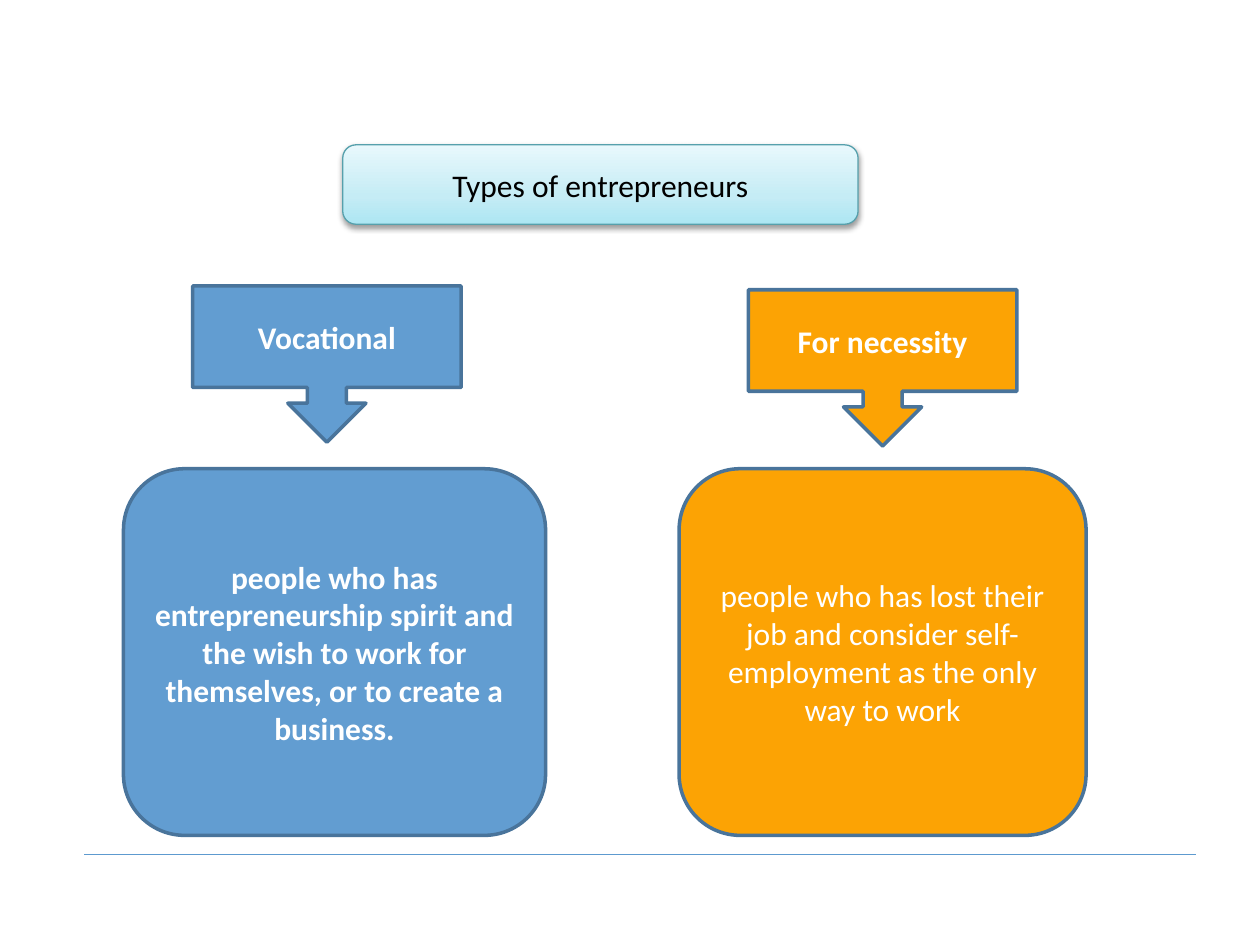
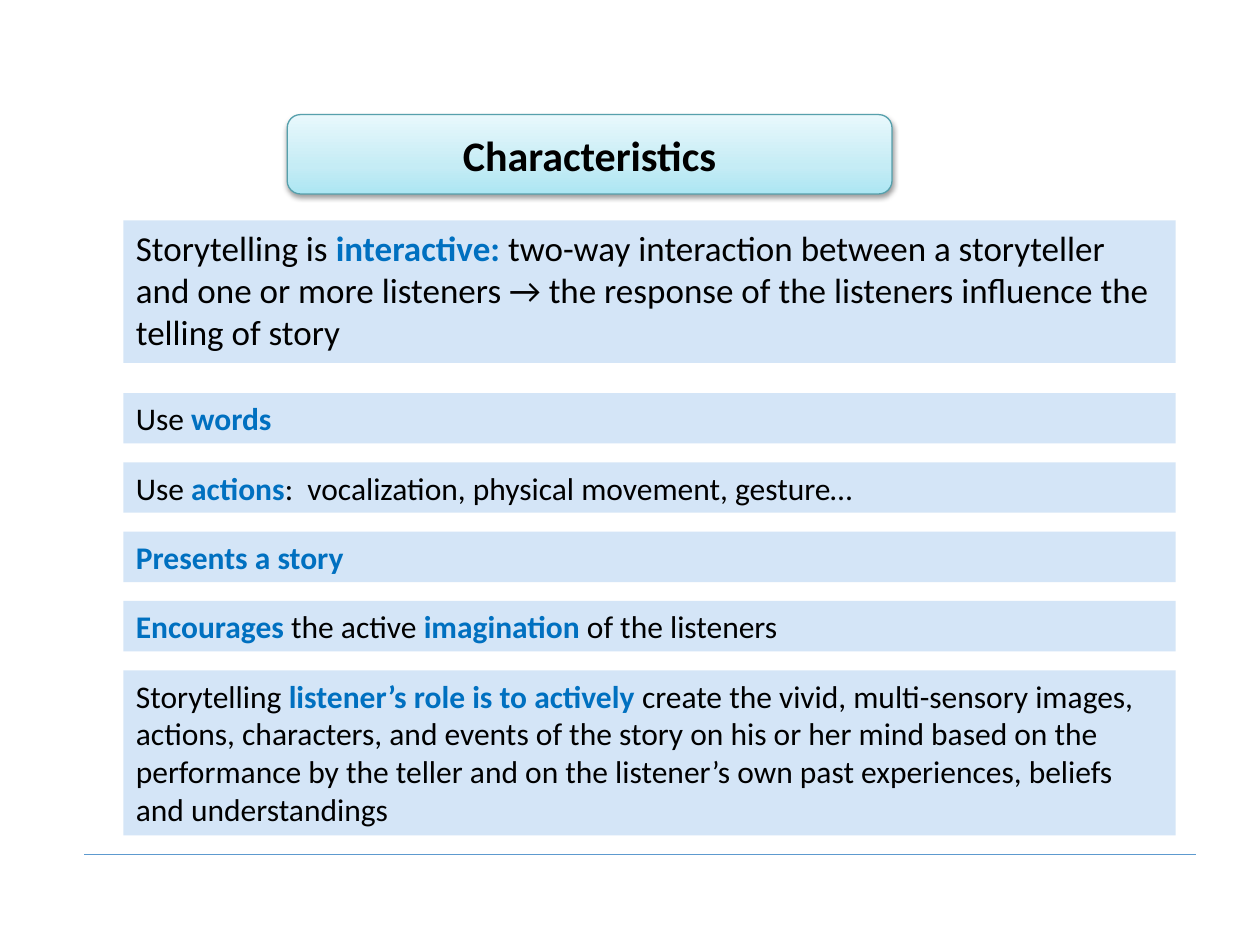
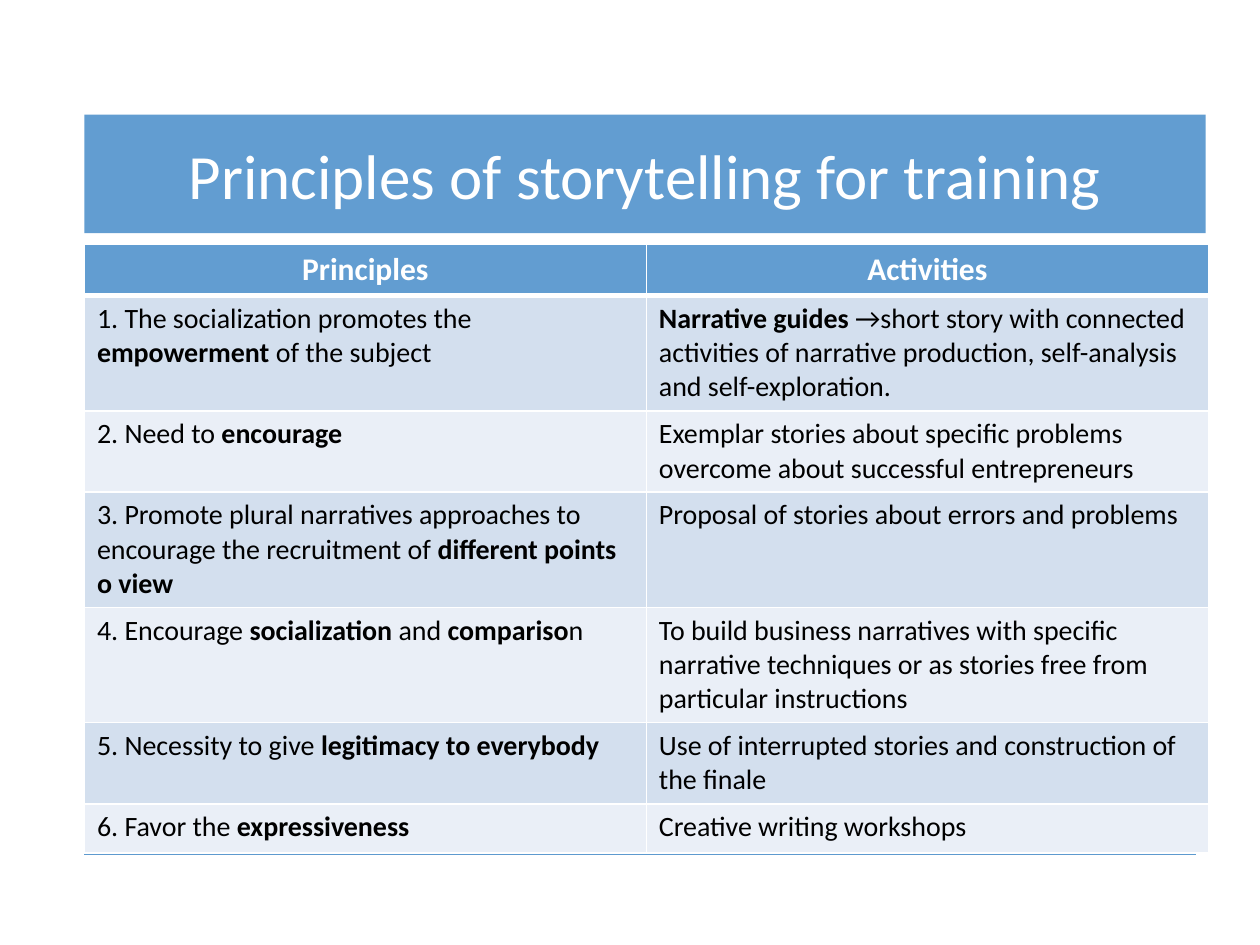
from dataclasses import dataclass

from pptx import Presentation
from pptx.dml.color import RGBColor
from pptx.enum.shapes import MSO_CONNECTOR, MSO_SHAPE as Preset
from pptx.enum.text import MSO_ANCHOR as Anchor, PP_ALIGN as Align
from pptx.oxml import parse_xml
from pptx.oxml.ns import nsdecls
from pptx.util import Inches, Length, Pt

COLUMNS, ROWS, UNIT = 100, 75, 0.1
FONT = "Calibri"
BLUE, ORANGE, EDGE = "629DD1", "FCA304", "49749B"
PALE, ACCENT, RULE = "D4E5F7", "0070C0", "5D9ACF"
TEAL, WHITE, BLACK = "56A0AC", "FFFFFF", "000000"
ROW_TINTS = ("D3DFEE", "EAEFF7")
BADGE_STOPS = ((0, "ACE6F3"), (35, "C5ECF5"), (100, "E8F8FC"))
MARGIN, INDENT, FOOT = 6.7, 9.8, 67.8
HEADER_TOP = 9.1


@dataclass(frozen=True)
class Area:
    """A rectangle in grid columns and rows."""

    column: float
    row: float
    width: float
    height: float

    def lengths(self) -> tuple[Length, ...]:
        return tuple(grid(n) for n in (self.column, self.row, self.width, self.height))


@dataclass(frozen=True)
class Style:
    """The look of a paragraph; strong is the colour of marked words."""

    size: float = 18
    color: str = BLACK
    bold: bool = False
    align: Align = Align.LEFT
    strong: str | None = None


@dataclass(frozen=True)
class Kind:
    """A type of entrepreneur: its callout above its description."""

    name: str
    text: str
    fill: str
    callout: Area
    card: Area
    bold: bool


@dataclass(frozen=True)
class Band:
    """A tinted strip holding one characteristic."""

    text: str
    row: float
    height: float = 4
    size: float = 18


KINDS = (
    Kind(
        "Vocational",
        "people who has entrepreneurship spirit and the wish to work for themselves, "
        "or to create a business.",
        BLUE, Area(15.3, 22.7, 21.3, 12.4), Area(INDENT, 37.2, 33.5, 29.1), True,
    ),
    Kind(
        "For necessity",
        "people who has lost their job and consider self-employment as the only way to work",
        ORANGE, Area(59.4, 23, 21.3, 12.4), Area(53.9, 37.2, 32.3, 29.1), False,
    ),
)

FIRST_SHORT, PITCH = 31.2, 5.5
SHORT_TEXTS = (
    "Use *words*",
    "Use* actions*:  vocalization, physical movement, gesture…",
    "*Presents a story*",
    "*Encourages* the active *imagination *of the listeners",
)
BANDS = (
    Band(
        "Storytelling is *interactive: *two-way interaction between a storyteller and one or "
        "more listeners → the response of the listeners influence the telling of story",
        17.5, 11.3, 20,
    ),
    *(Band(text, FIRST_SHORT + i * PITCH) for i, text in enumerate(SHORT_TEXTS)),
    Band(
        "Storytelling *listener’s role is to actively *create the vivid, multi-sensory images, "
        "actions, characters, and events of the story on his or her mind based on the "
        "performance by the teller and on the listener’s own past experiences, beliefs and "
        "understandings",
        FIRST_SHORT + len(SHORT_TEXTS) * PITCH, 13.1,
    ),
)

ROW_HEIGHTS = (4, 9.1, 6.4, 9.1, 9.1, 6.4, 3.9)
PRINCIPLES = (
    ("Principles", "Activities"),
    (
        "1. The socialization promotes the *empowerment* of the subject",
        "*Narrative guides *→short story with connected activities of narrative production, "
        "self-analysis and self-exploration.",
    ),
    (
        "2. Need to *encourage*",
        "Exemplar stories about specific problems overcome about successful entrepreneurs",
    ),
    (
        "3. Promote plural narratives approaches to encourage the recruitment of "
        "*different points o view*",
        "Proposal of stories about errors and problems",
    ),
    (
        "4. Encourage *socialization* and *compariso*n",
        "To build business narratives with specific narrative techniques or as stories free "
        "from particular instructions",
    ),
    (
        "5. Necessity to give *legitimacy to everybody*",
        "Use of interrupted stories and construction of the finale",
    ),
    ("6. Favor the *expressiveness*", "Creative writing workshops"),
)


def grid(count: float) -> Length:
    """Turn a number of grid units into a length."""
    return Inches(count * UNIT)


def rgb(color: str) -> RGBColor:
    """Turn a hex string into a colour."""
    return RGBColor.from_string(color)


def write(frame, text: str, style: Style) -> None:
    """Write one paragraph, with the words between asterisks made strong."""
    paragraph = frame.paragraphs[0]
    paragraph.alignment = style.align
    font = paragraph.font
    font.name, font.size, font.bold = FONT, Pt(style.size), style.bold
    font.color.rgb = rgb(style.color)
    for i, words in enumerate(text.split("*")):
        if not words:
            continue
        span = paragraph.add_run()
        span.text = words
        if i % 2:
            span.font.bold = True
            if style.strong:
                span.font.color.rgb = rgb(style.strong)


def add_box(page, preset: Preset, area: Area, text: str, style: Style,
            fill: str | None = None, edge: str | None = None, weight: float = 2,
            anchor: Anchor = Anchor.MIDDLE):
    """Add a preset shape with text and no shadow."""
    box = page.shapes.add_shape(preset, *area.lengths())
    box.shadow.inherit = False
    if fill:
        box.fill.solid()
        box.fill.fore_color.rgb = rgb(fill)
    if edge:
        box.line.color.rgb = rgb(edge)
        box.line.width = Pt(weight)
    else:
        box.line.fill.background()
    box.text_frame.word_wrap = True
    box.text_frame.vertical_anchor = anchor
    write(box.text_frame, text, style)
    return box


def add_badge(page, area: Area, text: str, style: Style) -> None:
    """Add a rounded heading with a gradient and a soft shadow."""
    box = add_box(page, Preset.ROUNDED_RECTANGLE, area, text, style, edge=TEAL, weight=0.75)
    stops = "".join(
        f'<a:gs pos="{share * 1000}"><a:srgbClr val="{color}"/></a:gs>'
        for share, color in BADGE_STOPS
    )
    properties = box.element.spPr
    properties.insert(2, parse_xml(
        f'<a:gradFill {nsdecls("a")} rotWithShape="1"><a:gsLst>{stops}</a:gsLst>'
        '<a:lin ang="16200000" scaled="0"/></a:gradFill>'
    ))
    properties[-1].append(parse_xml(
        f'<a:outerShdw {nsdecls("a")} blurRad="{Pt(3.1)}" dist="{Pt(1.6)}" dir="5400000" '
        f'rotWithShape="0"><a:srgbClr val="{BLACK}"><a:alpha val="38000"/></a:srgbClr>'
        '</a:outerShdw>'
    ))


def add_page(deck):
    """Add a blank slide with the rule above the footer."""
    page = deck.slides.add_slide(deck.slide_layouts[6])
    rule = page.shapes.add_connector(
        MSO_CONNECTOR.STRAIGHT, *(grid(n) for n in (MARGIN, FOOT, 94.9, FOOT))
    )
    rule.line.color.rgb = rgb(RULE)
    rule.line.width = Pt(0.75)
    rule.element.spPr.append(parse_xml(f'<a:effectLst {nsdecls("a")}/>'))
    return page


def set_borders(cell, top: float, bottom: float) -> None:
    """Give a cell white borders, with the top and bottom widths in points."""
    properties = cell._tc.get_or_add_tcPr()
    for i, (side, width) in enumerate((("L", 1), ("R", 1), ("T", top), ("B", bottom))):
        properties.insert(i, parse_xml(
            f'<a:ln{side} {nsdecls("a")} w="{Pt(width)}"><a:solidFill>'
            f'<a:srgbClr val="{WHITE}"/></a:solidFill></a:ln{side}>'
        ))


def add_types(deck) -> None:
    """Build the slide on the types of entrepreneurs."""
    page = add_page(deck)
    add_badge(page, Area(27.2, 11.5, 40.9, 6.3), "Types of entrepreneurs",
              Style(align=Align.CENTER))
    for kind in KINDS:
        add_box(page, Preset.ROUNDED_RECTANGLE, kind.card, kind.text,
                Style(color=WHITE, bold=kind.bold, align=Align.CENTER), kind.fill, EDGE)
        add_box(page, Preset.DOWN_ARROW_CALLOUT, kind.callout, kind.name,
                Style(color=WHITE, bold=True, align=Align.CENTER), kind.fill, EDGE)


def add_characteristics(deck) -> None:
    """Build the slide on the characteristics of storytelling."""
    page = add_page(deck)
    add_badge(page, Area(22.8, HEADER_TOP, 48, 6.3), "Characteristics",
              Style(24, bold=True, align=Align.CENTER))
    for band in BANDS:
        add_box(page, Preset.RECTANGLE, Area(INDENT, band.row, 83.5, band.height), band.text,
                Style(band.size, strong=ACCENT), PALE, anchor=Anchor.TOP)


def add_principles(deck) -> None:
    """Build the slide with the table of principles and activities."""
    page = add_page(deck)
    area = Area(MARGIN, 19.4, 89.2, sum(ROW_HEIGHTS))
    table = page.shapes.add_table(len(PRINCIPLES), 2, *area.lengths()).table
    head = Style(18, WHITE, True, Align.CENTER)
    for r, (texts, height) in enumerate(zip(PRINCIPLES, ROW_HEIGHTS)):
        table.rows[r].height = grid(height)
        for c, text in enumerate(texts):
            cell = table.cell(r, c)
            cell.fill.solid()
            cell.fill.fore_color.rgb = rgb(ROW_TINTS[(r - 1) % 2] if r else BLUE)
            set_borders(cell, top=3 if r == 1 else 1, bottom=1 if r else 3)
            write(cell.text_frame, text, Style(16) if r else head)
    add_box(page, Preset.RECTANGLE, Area(MARGIN, HEADER_TOP, 89, 9.4),
            "Principles of storytelling for training",
            Style(36, WHITE, align=Align.CENTER), BLUE)


def main() -> None:
    """Build and save the deck."""
    deck = Presentation()
    deck.slide_width, deck.slide_height = grid(COLUMNS), grid(ROWS)
    add_types(deck)
    add_characteristics(deck)
    add_principles(deck)
    deck.save("out.pptx")


if __name__ == "__main__":
    main()
